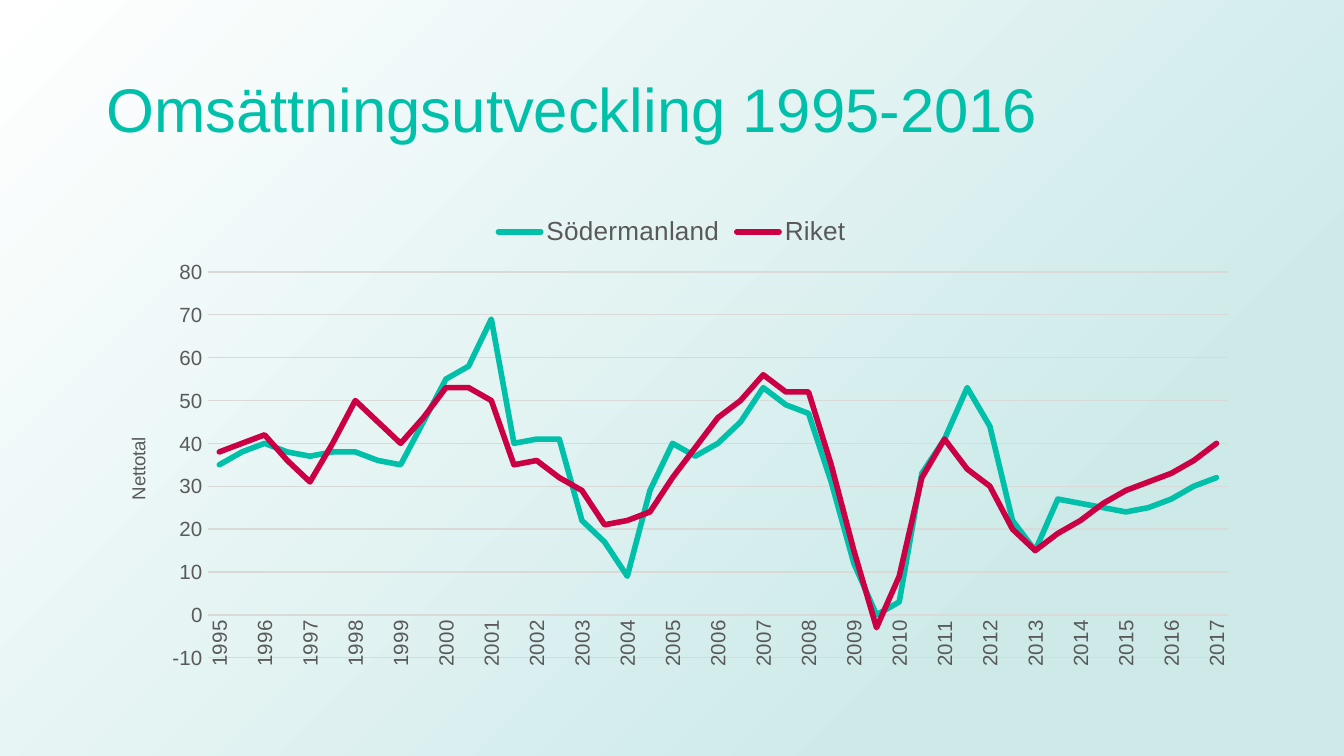
from lxml import etree
from pptx import Presentation
from pptx.chart.data import CategoryChartData
from pptx.dml.color import RGBColor
from pptx.enum.chart import XL_CHART_TYPE, XL_LEGEND_POSITION, XL_TICK_MARK
from pptx.enum.shapes import MSO_SHAPE
from pptx.enum.text import MSO_ANCHOR
from pptx.oxml import parse_xml
from pptx.oxml.ns import nsdecls, qn
from pptx.util import Pt

LINE_CHART = XL_CHART_TYPE.LINE
LEGEND_TOP = XL_LEGEND_POSITION.TOP
NO_TICK = XL_TICK_MARK.NONE
RECTANGLE = MSO_SHAPE.RECTANGLE
MIDDLE = MSO_ANCHOR.MIDDLE

TEAL = RGBColor(0x00, 0xC0, 0xA9)
CRIMSON = RGBColor(0xCB, 0x00, 0x44)
GREY = RGBColor(0x59, 0x59, 0x59)
GRID = RGBColor(0xD9, 0xD9, 0xD9)
PALE_TEAL = RGBColor(0xCD, 0xEA, 0xE9)
WHITE = RGBColor(0xFF, 0xFF, 0xFF)

EMU_PER_PX = 914400 / 134.4
WIDTH, HEIGHT = 1344, 756
CHART_BOX = (93, 202, 1158, 478)
PLOT_BOX = (208, 272, 1020, 386)
AXIS_TITLE_AT = (123, 434)

YEARS = [str(1995 + half // 2) for half in range(45)]
TURNOVER = [
    ("Södermanland", TEAL, [
        35, 38, 40, 38, 37, 38, 38, 36, 35, 45, 55, 58, 69, 40, 41,
        41, 22, 17, 9, 29, 40, 37, 40, 45, 53, 49, 47, 31, 12, 0,
        3, 33, 41, 53, 44, 22, 15, 27, 26, 25, 24, 25, 27, 30, 32]),
    ("Riket", CRIMSON, [
        38, 40, 42, 36, 31, 40, 50, 45, 40, 46, 53, 53, 50, 35, 36,
        32, 29, 21, 22, 24, 32, 39, 46, 50, 56, 52, 52, 35, 15, -3,
        9, 32, 41, 34, 30, 20, 15, 19, 22, 26, 29, 31, 33, 36, 40]),
]


def px(length):
    return round(length * EMU_PER_PX)


def apply(target, values):
    for name, value in values.items():
        setattr(target, name, value)


class SlideBuilder:
    """Holds the text style and the current slide, and draws its elements."""

    font_name = "Arial"

    def __init__(self, slide):
        self.slide = slide

    def style(self, font, size, color):
        apply(font, {"name": self.font_name, "size": Pt(size), "bold": False})
        font.color.rgb = color

    def stroke(self, line, color, width):
        line.color.rgb = color
        line.width = Pt(width)

    def backdrop(self, box, stops):
        panel = self.slide.shapes.add_shape(RECTANGLE, *map(px, box))
        panel.shadow.inherit = False
        panel.line.fill.background()
        panel.fill.gradient()
        for stop, (position, color) in zip(panel.fill.gradient_stops, stops):
            stop.position = position
            stop.color.rgb = color
        gradient = panel._element.spPr.find(qn("a:gradFill"))
        gradient.replace(gradient.find(qn("a:lin")), parse_xml(
            f'<a:path {nsdecls("a")} path="circle">'
            '<a:fillToRect l="100000" t="100000"/></a:path>'))

    def title(self, box, text, size, color):
        frame = self.slide.shapes.add_textbox(*map(px, box)).text_frame
        apply(frame, {"word_wrap": True, "vertical_anchor": MIDDLE})
        heading = frame.paragraphs[0]
        heading.line_spacing = 0.9
        run = heading.add_run()
        run.text = text
        self.style(run.font, size, color)

    def place(self, element, index, at, size=()):
        left, top, width, height = CHART_BOX
        values = {"x": (at[0] - left) / width, "y": (at[1] - top) / height}
        if size:
            values.update(w=size[0] / width, h=size[1] / height)
        for old in element.findall(qn("c:layout")):
            element.remove(old)
        layout = etree.Element(qn("c:layout"))
        manual = etree.SubElement(layout, qn("c:manualLayout"))
        modes = {"layoutTarget": "inner"} if size else {}
        modes.update(xMode="edge", yMode="edge")
        modes.update((key, f"{value:.4f}") for key, value in values.items())
        for key, value in modes.items():
            etree.SubElement(manual, qn(f"c:{key}")).set("val", value)
        element.insert(index, layout)

    def line_chart(self, categories, series, axis_title):
        data = CategoryChartData(number_format="0")
        data.categories = categories
        for name, _, values in series:
            data.add_series(name, values)
        chart = self.slide.shapes.add_chart(
            LINE_CHART, *map(px, CHART_BOX), data).chart
        self.style(chart.font, 10, GREY)
        apply(chart, {"has_title": False, "has_legend": True})
        apply(chart.legend, {"position": LEGEND_TOP, "include_in_layout": False})
        self.style(chart.legend.font, 14, GREY)
        chart.plots[0].vary_by_categories = False
        for plotted, (_, color, _) in zip(chart.plots[0].series, series):
            plotted.smooth = False
            self.stroke(plotted.format.line, color, 3)
            plotted.format.line._get_or_add_ln().set("cap", "rnd")
        self.year_axis(chart.category_axis)
        self.value_axis(chart.value_axis, axis_title)
        self.place(chart._chartSpace.chart.plotArea, 0, PLOT_BOX[:2], PLOT_BOX[2:])

    def axis(self, axis):
        apply(axis, {"major_tick_mark": NO_TICK, "minor_tick_mark": NO_TICK})
        self.style(axis.tick_labels.font, 11, GREY)

    def year_axis(self, axis):
        self.axis(axis)
        self.stroke(axis.format.line, GRID, 0.75)
        element = axis._element
        element.find(qn("c:txPr")).find(qn("a:bodyPr")).set("rot", "-5400000")
        skip = etree.Element(qn("c:tickLblSkip"))
        skip.set("val", "2")
        element.find(qn("c:noMultiLvlLbl")).addprevious(skip)

    def value_axis(self, axis, title):
        self.axis(axis)
        apply(axis, {"minimum_scale": -10, "maximum_scale": 80, "major_unit": 10,
                     "has_major_gridlines": True})
        apply(axis.tick_labels, {"number_format": "0",
                                 "number_format_is_linked": False})
        axis.format.line.fill.background()
        self.stroke(axis.major_gridlines.format.line, GRID, 0.75)
        frame = axis.axis_title.text_frame
        frame.text = title
        self.style(frame.paragraphs[0].runs[0].font, 10, GREY)
        frame._txBody.find(qn("a:bodyPr")).set("rot", "-5400000")
        self.place(axis.axis_title._element, 1, AXIS_TITLE_AT)


def main():
    deck = Presentation()
    apply(deck, {"slide_width": px(WIDTH), "slide_height": px(HEIGHT)})
    builder = SlideBuilder(deck.slides.add_slide(deck.slide_layouts[6]))
    builder.backdrop((0, 0, WIDTH, HEIGHT), [(0.23, PALE_TEAL), (1, WHITE)])
    builder.title((93, 40, 1158, 146), "Omsättningsutveckling 1995-2016", 33, TEAL)
    builder.line_chart(YEARS, TURNOVER, "Nettotal")
    deck.save("out.pptx")


if __name__ == "__main__":
    main()
